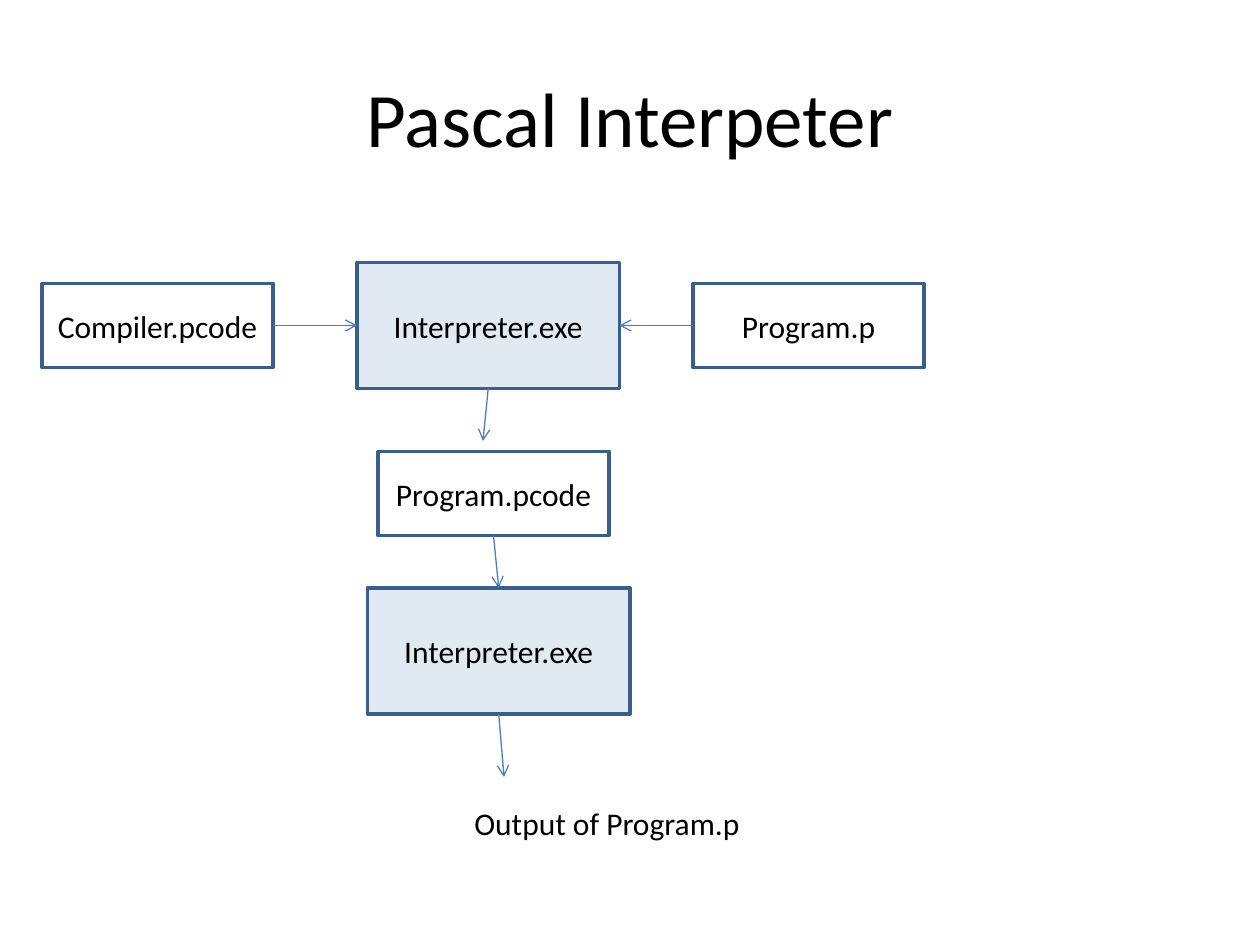
from pptx import Presentation
from pptx.dml.color import RGBColor
from pptx.enum.shapes import MSO_CONNECTOR as Connector, MSO_SHAPE as Shape
from pptx.enum.text import MSO_ANCHOR as Anchor, MSO_AUTO_SIZE as AutoSize, PP_ALIGN as Align
from pptx.oxml.ns import qn
from pptx.util import Pt
from lxml.etree import SubElement

FONT = "Calibri"
BLACK, BLUE, BORDER, ARROW = "000000", "4F81BD", "3A5F8C", "4B7EBC"
TOP, LEFT, BOTTOM, RIGHT = range(4)
FILE_SIZE = (132, 48)
PROGRAM_SIZE = (150, 72)


def color(value):
    return RGBColor.from_string(value)


def write(frame, text, size, align=Align.CENTER, anchor=Anchor.MIDDLE, wrap=True):
    frame.word_wrap = wrap
    frame.vertical_anchor = anchor
    paragraph = frame.paragraphs[0]
    paragraph.alignment = align
    run = paragraph.add_run()
    run.text = text
    run.font.name = FONT
    run.font.size = Pt(size)
    run.font.color.rgb = color(BLACK)


def add_title(slide, box, text):
    title = slide.shapes.add_textbox(*map(Pt, box))
    write(title.text_frame, text, 44)


def add_node(slide, box, text, tinted=False):
    node = slide.shapes.add_shape(Shape.RECTANGLE, *map(Pt, box))
    node.shadow.inherit = False
    if tinted:
        node.fill.solid()
        node.fill.fore_color.rgb = color(BLUE)
        fill_color = node.fill._xPr.find(qn("a:solidFill"))[0]
        SubElement(fill_color, qn("a:alpha"), val="17000")
    else:
        node.fill.background()
    node.line.color.rgb = color(BORDER)
    node.line.width = Pt(2)
    write(node.text_frame, text, 18)
    return node


def add_arrow(slide, source, side, target=None, target_side=TOP, end=(0, 0)):
    """Arrow from a node's side to another node's side, or to a free end point."""
    arrow = slide.shapes.add_connector(Connector.STRAIGHT, 0, 0, *map(Pt, end))
    arrow.begin_connect(source, side)
    if target is not None:
        arrow.end_connect(target, target_side)
    arrow.line.color.rgb = color(ARROW)
    arrow.line.width = Pt(0.75)
    SubElement(arrow.line._get_or_add_ln(), qn("a:tailEnd"), type="arrow")
    SubElement(arrow._element.spPr, qn("a:effectLst"))


def add_flow(slide, box):
    left, top, width, height = box

    def place(x, y, size):
        return (left + x, top + y, *size)

    # Nodes
    compiler = add_node(slide, place(0, 12, FILE_SIZE), "Compiler.pcode")
    interpreter = add_node(slide, place(180, 0, PROGRAM_SIZE), "Interpreter.exe", tinted=True)
    program = add_node(slide, place(372, 12, FILE_SIZE), "Program.p")
    pcode = add_node(slide, place(192, 108, FILE_SIZE), "Program.pcode")
    runner = add_node(slide, place(186, 186, PROGRAM_SIZE), "Interpreter.exe", tinted=True)

    # Arrows
    add_arrow(slide, compiler, RIGHT, interpreter, LEFT)
    add_arrow(slide, program, LEFT, interpreter, RIGHT)
    add_arrow(slide, interpreter, BOTTOM, end=(left + 252, top + 102))
    add_arrow(slide, pcode, BOTTOM, runner, TOP)
    add_arrow(slide, runner, BOTTOM, end=(left + 264, top + 294))

    # Output label
    label = slide.shapes.add_textbox(*map(Pt, place(240, 306, (168, 29))))
    write(label.text_frame, "Output of Program.p", 18, Align.LEFT, Anchor.TOP, wrap=False)
    label.text_frame.auto_size = AutoSize.SHAPE_TO_FIT_TEXT


def main():
    presentation = Presentation()
    presentation.slide_width = Pt(720)
    presentation.slide_height = Pt(540)
    slide = presentation.slides.add_slide(presentation.slide_layouts[6])
    add_title(slide, (36, 21.6, 648, 90), "Pascal Interpeter")
    add_flow(slide, (24, 150, 504, 335))
    presentation.save("out.pptx")


if __name__ == "__main__":
    main()
